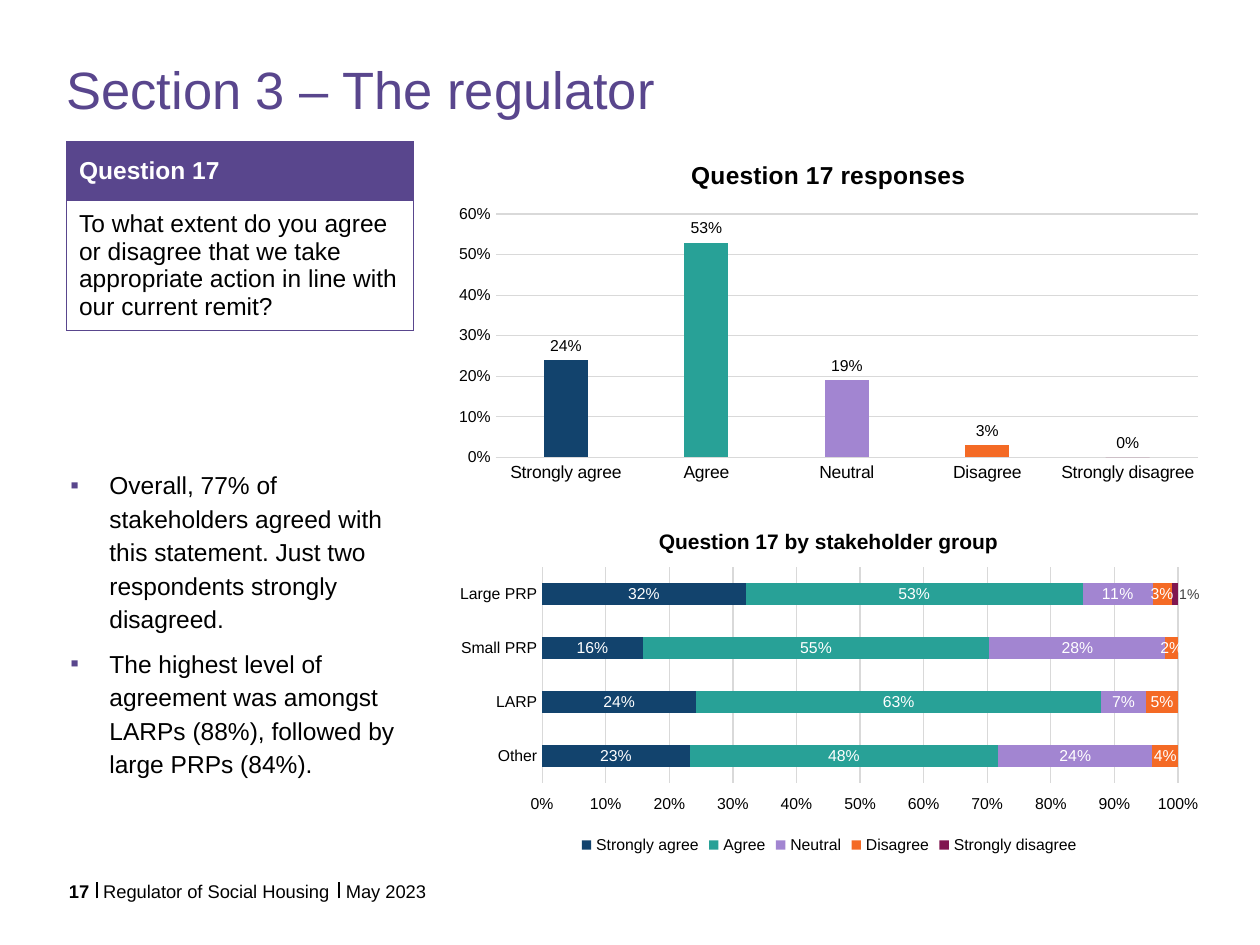
from lxml import etree
from pptx import Presentation
from pptx.chart.data import CategoryChartData
from pptx.dml.color import RGBColor
from pptx.enum.chart import (XL_CHART_TYPE, XL_LABEL_POSITION, XL_LEGEND_POSITION,
                             XL_TICK_LABEL_POSITION, XL_TICK_MARK)
from pptx.enum.shapes import MSO_CONNECTOR
from pptx.enum.text import MSO_ANCHOR, MSO_AUTO_SIZE, PP_ALIGN
from pptx.oxml import parse_xml
from pptx.oxml.ns import nsdecls, qn
from pptx.util import Pt

COLUMNS = XL_CHART_TYPE.COLUMN_CLUSTERED
STACKED_BARS = XL_CHART_TYPE.BAR_STACKED_100
NO_TICKS = XL_TICK_MARK.NONE
HIGH = XL_TICK_LABEL_POSITION.HIGH
OUTSIDE_END = XL_LABEL_POSITION.OUTSIDE_END
BOTTOM = XL_LEGEND_POSITION.BOTTOM
LEFT, CENTER = PP_ALIGN.LEFT, PP_ALIGN.CENTER
TOP, MIDDLE = MSO_ANCHOR.TOP, MSO_ANCHOR.MIDDLE

FONT = "Arial"
PURPLE, BLACK, WHITE, GRID, GREY = "59468D", "000000", "FFFFFF", "D9D9D9", "404040"
CHART_WIDTH, CHART_HEIGHT = 439.2, 198.7
ANSWERS = ["Strongly agree", "Agree", "Neutral", "Disagree", "Strongly disagree"]
ANSWER_COLORS = ["12436D", "28A197", "A285D1", "F46A25", "801650"]
OVERALL = [0.24, 0.53, 0.19, 0.03, 0]
GROUPS = ["Large PRP", "Small PRP", "LARP", "Other"]
GROUP_SHARES = [
    [0.32, 0.16, 0.24, 0.23],
    [0.53, 0.55, 0.63, 0.48],
    [0.11, 0.28, 0.07, 0.24],
    [0.03, 0.02, 0.05, 0.04],
    [0.01, 0, 0, 0],
]
FINDINGS = [
    "Overall, 77% of stakeholders agreed with this statement. "
    "Just two respondents strongly disagreed.",
    "The highest level of agreement was amongst LARPs (88%), "
    "followed by large PRPs (84%).",
]
QUESTION = ("To what extent do you agree or disagree that we take appropriate "
            "action in line with our current remit?")


def color(value):
    return RGBColor.from_string(value)


def style_font(font, size, font_color, bold=False):
    font.name, font.size, font.bold = FONT, Pt(size), bold
    font.color.rgb = color(font_color)


def add_run(paragraph, text, size, font_color=BLACK, bold=False):
    run = paragraph.add_run()
    run.text = text
    style_font(run.font, size, font_color, bold)


def place(shape, left, top, width, height):
    shape.left, shape.top = Pt(left), Pt(top)
    shape.width, shape.height = Pt(width), Pt(height)


def clear_margins(frame):
    frame.margin_left = frame.margin_top = 0
    frame.margin_right = frame.margin_bottom = 0


def fill_title(title, text):
    place(title, 38, 36.7, 638.6, 57)
    frame = title.text_frame
    clear_margins(frame)
    frame.vertical_anchor = TOP
    frame.auto_size = MSO_AUTO_SIZE.NONE
    paragraph = frame.paragraphs[0]
    paragraph.alignment, paragraph.line_spacing = LEFT, 0.9
    add_run(paragraph, text, 30, PURPLE)


def add_bullet(paragraph):
    properties = paragraph._p.get_or_add_pPr()
    properties.set("marL", str(Pt(22.3)))
    properties.set("indent", str(-Pt(22.3)))
    bullet_color = etree.SubElement(properties, qn("a:buClr"))
    etree.SubElement(bullet_color, qn("a:srgbClr"), val=PURPLE)
    etree.SubElement(properties, qn("a:buFont"), typeface=FONT)
    etree.SubElement(properties, qn("a:buChar"), char="▪")


def fill_list(body, items):
    place(body, 33, 262.8, 216, 166.3)
    frame = body.text_frame
    frame.auto_size = MSO_AUTO_SIZE.SHAPE_TO_FIT_TEXT
    for index, item in enumerate(items):
        paragraph = frame.add_paragraph() if index else frame.paragraphs[0]
        paragraph.line_spacing = 1.14
        paragraph.space_before, paragraph.space_after = Pt(0), Pt(6)
        add_bullet(paragraph)
        add_run(paragraph, item, 14)


def add_footer_text(slide, text, left, width, alignment=LEFT, bold=False):
    box = slide.shapes.add_textbox(Pt(left), Pt(503), Pt(width), Pt(8.6))
    frame = box.text_frame
    frame.word_wrap = True
    clear_margins(frame)
    frame.paragraphs[0].alignment = alignment
    add_run(frame.paragraphs[0], text, 10.5, BLACK, bold)


def add_footer_divider(slide, x):
    line = slide.shapes.add_connector(MSO_CONNECTOR.STRAIGHT, Pt(x), Pt(513.4), Pt(x), Pt(504))
    line.line.color.rgb = color(BLACK)
    line.line.width = Pt(0.75)
    etree.SubElement(line._element.spPr, qn("a:effectLst"))


def add_cell_borders(cell):
    properties = cell._tc.get_or_add_tcPr()
    for side in ("lnL", "lnR", "lnT", "lnB"):
        border = etree.SubElement(properties, qn(f"a:{side}"), w=str(Pt(0.5)))
        fill = etree.SubElement(border, qn("a:solidFill"))
        etree.SubElement(fill, qn("a:srgbClr"), val=PURPLE)


def add_question_table(slide):
    frame = slide.shapes.add_table(2, 1, Pt(38), Pt(81), Pt(198.5), Pt(89.5))
    table = frame.table
    table.horz_banding = False
    rows = [("Question 17", 33.5, WHITE, True), (QUESTION, 56, BLACK, False)]
    for index, (text, height, font_color, heading) in enumerate(rows):
        table.rows[index].height = Pt(height)
        cell = table.cell(index, 0)
        cell.vertical_anchor = MIDDLE
        add_cell_borders(cell)
        if heading:
            cell.fill.solid()
            cell.fill.fore_color.rgb = color(PURPLE)
        else:
            cell.fill.background()
        add_run(cell.text_frame.paragraphs[0], text, 14, font_color, heading)


def set_layout(parent, position, modes=(), **lengths):
    """Place a chart part by lengths in points within the chart area."""
    for old in parent.findall(qn("c:layout")):
        parent.remove(old)
    layout = parse_xml(f"<c:layout {nsdecls('c')}><c:manualLayout/></c:layout>")
    for name, value in modes:
        etree.SubElement(layout[0], qn(f"c:{name}"), val=value)
    for name, length in lengths.items():
        whole = CHART_WIDTH if name in "xw" else CHART_HEIGHT
        etree.SubElement(layout[0], qn(f"c:{name}"), val=str(length / whole))
    parent.insert(position, layout)


EDGES = [("xMode", "edge"), ("yMode", "edge")]
INNER_EDGES = [("layoutTarget", "inner"), *EDGES]


def add_survey_chart(slide, kind, top, categories, series, title, title_size, title_at, plot_at):
    data = CategoryChartData(number_format="0%")
    data.categories = categories
    for name, values in series:
        data.add_series(name, values)
    chart = slide.shapes.add_chart(
        kind, Pt(254.2), Pt(top), Pt(CHART_WIDTH), Pt(CHART_HEIGHT), data).chart
    style_font(chart.font, 10, BLACK)
    chart.has_legend = False
    add_run(chart.chart_title.text_frame.paragraphs[0], title, title_size, BLACK, True)
    chart.chart_title.include_in_layout = False
    set_layout(chart.chart_title._element, 1, EDGES, **title_at)
    set_layout(chart._chartSpace.chart.plotArea, 0, INNER_EDGES, **plot_at)

    category_axis, value_axis = chart.category_axis, chart.value_axis
    for axis in (category_axis, value_axis):
        axis.major_tick_mark = axis.minor_tick_mark = NO_TICKS
        style_font(axis.tick_labels.font, 9, BLACK)
    value_axis.format.line.fill.background()
    value_axis.minimum_scale, value_axis.major_unit = 0, 0.1
    value_axis.tick_labels.number_format = "0%"
    value_axis.tick_labels.number_format_is_linked = False
    for part in (category_axis, value_axis.major_gridlines):
        part.format.line.color.rgb = color(GRID)
        part.format.line.width = Pt(0.75)
    chart.plots[0].vary_by_categories = False
    return chart


def fill_with(part, fill_color):
    part.format.fill.solid()
    part.format.fill.fore_color.rgb = color(fill_color)


def show_labels(series, size, font_color, number_format="0%"):
    labels = series.data_labels
    labels.show_value = True
    labels.number_format, labels.number_format_is_linked = number_format, False
    style_font(labels.font, size, font_color)
    return labels


def add_overall_chart(slide):
    chart = add_survey_chart(
        slide, COLUMNS, 81.4, ANSWERS, [("Series 1", OVERALL)], "Question 17 responses", 14,
        {"x": 138.2, "y": 7.3}, {"x": 29, "y": 41, "w": 401.4, "h": 139})
    chart.value_axis.maximum_scale = 0.6
    chart.category_axis.tick_labels.font.size = Pt(10)
    plot = chart.plots[0]
    plot.gap_width, plot.overlap = 219, -27
    series = plot.series[0]
    fill_with(series, PURPLE)
    for index, answer_color in enumerate(ANSWER_COLORS):
        fill_with(series.points[index], answer_color)
    show_labels(series, 9, BLACK).position = OUTSIDE_END


def add_group_chart(slide):
    chart = add_survey_chart(
        slide, STACKED_BARS, 292.3, GROUPS, zip(ANSWERS, GROUP_SHARES),
        "Question 17 by stakeholder group", 12,
        {"x": 120.1, "y": 7.6}, {"x": 55.6, "y": 31.8, "w": 363.4, "h": 123.2})
    chart.value_axis.maximum_scale = 1
    chart.value_axis.tick_label_position = HIGH
    chart.category_axis.reverse_order = True
    chart.has_legend = True
    chart.legend.position = BOTTOM
    chart.legend.include_in_layout = False
    style_font(chart.legend.font, 9, BLACK)
    plot = chart.plots[0]
    plot.gap_width, plot.overlap = 150, 100
    for series, answer_color in zip(plot.series, ANSWER_COLORS):
        fill_with(series, answer_color)
        show_labels(series, 9, WHITE)
    last = plot.series[-1]
    labels = show_labels(last, 8, GREY, "0%;;")
    style_font(last.points[0].data_label.font, 8, GREY)
    set_layout(labels._element.find(qn("c:dLbl")), 1, x=8.5, y=0)


def main():
    presentation = Presentation()
    presentation.slide_width, presentation.slide_height = Pt(720), Pt(540)
    slide = presentation.slides.add_slide(presentation.slide_layouts[1])
    for x in (55.5, 193.7):
        add_footer_divider(slide, x)
    fill_title(slide.shapes.title, "Section 3 – The regulator")
    add_footer_text(slide, "May 2023", 197.7, 169)
    add_footer_text(slide, "Regulator of Social Housing", 59, 132)
    add_footer_text(slide, "17", 38, 14.4, CENTER, True)
    add_question_table(slide)
    fill_list(slide.placeholders[1], FINDINGS)
    add_overall_chart(slide)
    add_group_chart(slide)
    presentation.save("out.pptx")


if __name__ == "__main__":
    main()
